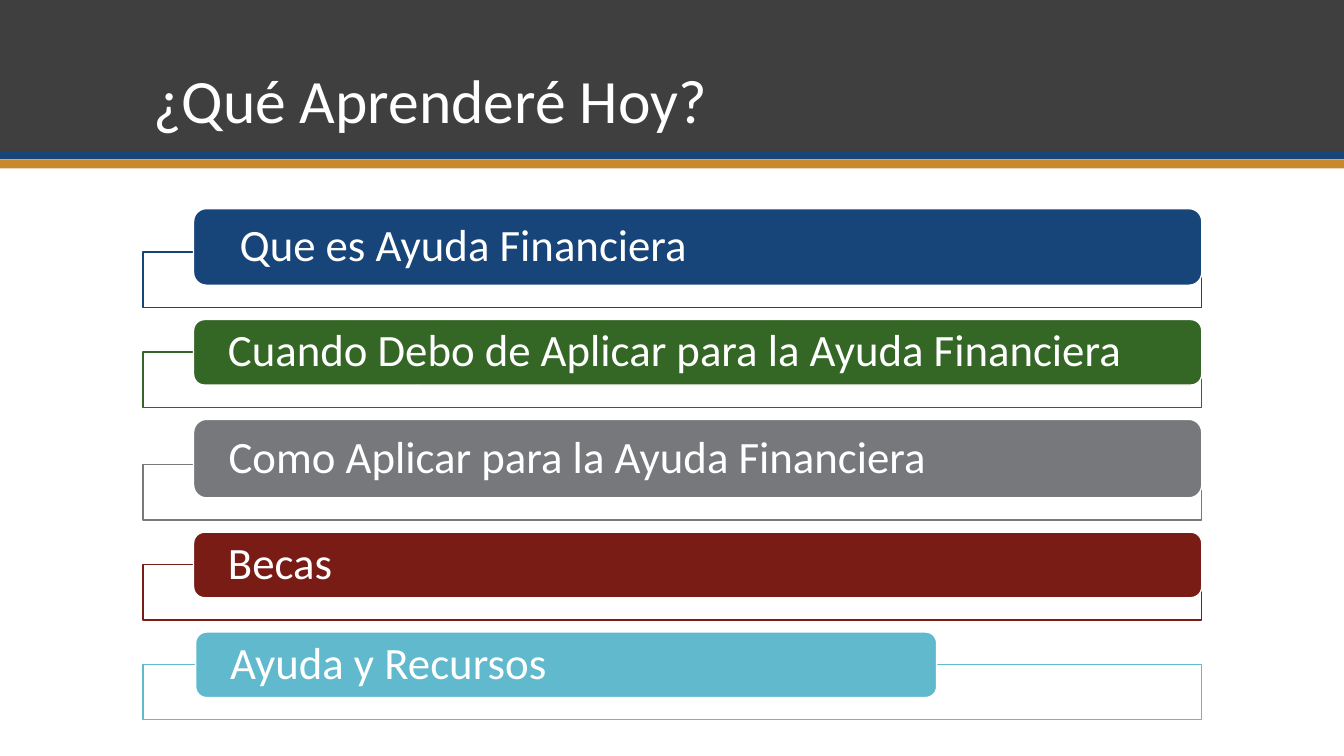
import pptx
import pptx.util
import pptx.dml.color
import pptx.enum.shapes
import pptx.enum.text
import pptx.oxml.ns
import lxml.etree

Inches = pptx.util.Inches
Pt = pptx.util.Pt
Shape = pptx.enum.shapes.MSO_SHAPE
Anchor = pptx.enum.text.MSO_ANCHOR

# Content
COLORS = {"white": "FFFFFF", "charcoal": "3F3F3F", "navy": "174479", "gold": "C6892B",
          "green": "346625", "gray": "76787B", "maroon": "7A1C16", "sky": "60B9CD"}
TITLE = "¿Qué Aprenderé Hoy?"
BANDS = [("charcoal", 1.5), ("navy", 0.08), ("gold", 0.09)]  # color, height
# text, color, bar height, bar left, bar width, text indent
TOPICS = [
    ("Que es Ayuda Financiera", "navy", 0.76, 1.92, 10, 0.42),
    ("Cuando Debo de Aplicar para la Ayuda Financiera", "green", 0.65, 1.92, 10, 0.31),
    ("Como Aplicar para la Ayuda Financiera", "gray", 0.78, 1.92, 10, 0.31),
    ("Becas", "maroon", 0.65, 1.92, 10, 0.31),
    ("Ayuda y Recursos", "sky", 0.65, 1.94, 7.35, 0.31),
]

# Layout in inches
PAGE_WIDTH, PAGE_HEIGHT = 13.33, 7.5
LEFT, WIDTH = 1.42, 10.5
FIRST_BAR_TOP = 2.07
TRAY_HEIGHT, TRAY_OVERLAP, TRAY_GAP = 0.55, 0.33, 0.12


def rgb(name):
    return pptx.dml.color.RGBColor.from_string(COLORS[name])


def add_block(page, kind, area, fill, line=None, opacity=None):
    block = page.shapes.add_shape(kind, *map(Inches, area))
    block.shadow.inherit = False
    block.fill.solid()
    block.fill.fore_color.rgb = rgb(fill)
    if opacity is not None:
        color = block.fill._xPr.find(".//" + pptx.oxml.ns.qn("a:srgbClr"))
        lxml.etree.SubElement(color, pptx.oxml.ns.qn("a:alpha"), val=str(opacity * 1000))
    if line:
        block.line.color.rgb = rgb(line)
        block.line.width = Pt(1)
    else:
        block.line.fill.background()
    return block


def write(shape, text, size=32, anchor=Anchor.MIDDLE, left=0.1, right=0.1, edge=0.0):
    frame = shape.text_frame
    frame.word_wrap = True
    frame.vertical_anchor = anchor
    frame.margin_left, frame.margin_right = Inches(left), Inches(right)
    frame.margin_top = frame.margin_bottom = Inches(edge)
    para = frame.paragraphs[0]
    para.alignment = pptx.enum.text.PP_ALIGN.LEFT
    para.line_spacing = 0.9
    span = para.add_run()
    span.text = text
    span.font.name = "Calibri"
    span.font.size = Pt(size)
    span.font.color.rgb = rgb("white")


deck = pptx.Presentation()
deck.slide_width, deck.slide_height = Inches(PAGE_WIDTH), Inches(PAGE_HEIGHT)
page = deck.slides.add_slide(deck.slide_layouts[6])

# Header bands
top = 0
for color, height in BANDS:
    add_block(page, Shape.RECTANGLE, (0, top, PAGE_WIDTH, height), color)
    top += height

# Title
title = page.shapes.add_textbox(*map(Inches, (LEFT, 0.28, WIDTH, 1.13)))
write(title, TITLE, size=44, anchor=Anchor.BOTTOM, edge=0.05)

# Topic bars, each overlapping an outlined tray
top = FIRST_BAR_TOP
for text, color, height, left, width, indent in TOPICS:
    tray_top = top + height - TRAY_OVERLAP
    add_block(page, Shape.RECTANGLE, (LEFT, tray_top, WIDTH, TRAY_HEIGHT), "white",
              line=color, opacity=90)
    bar = add_block(page, Shape.ROUNDED_RECTANGLE, (left, top, width, height), color, line="white")
    write(bar, text, left=indent, right=0.31)
    top = tray_top + TRAY_HEIGHT + TRAY_GAP

deck.save("out.pptx")
